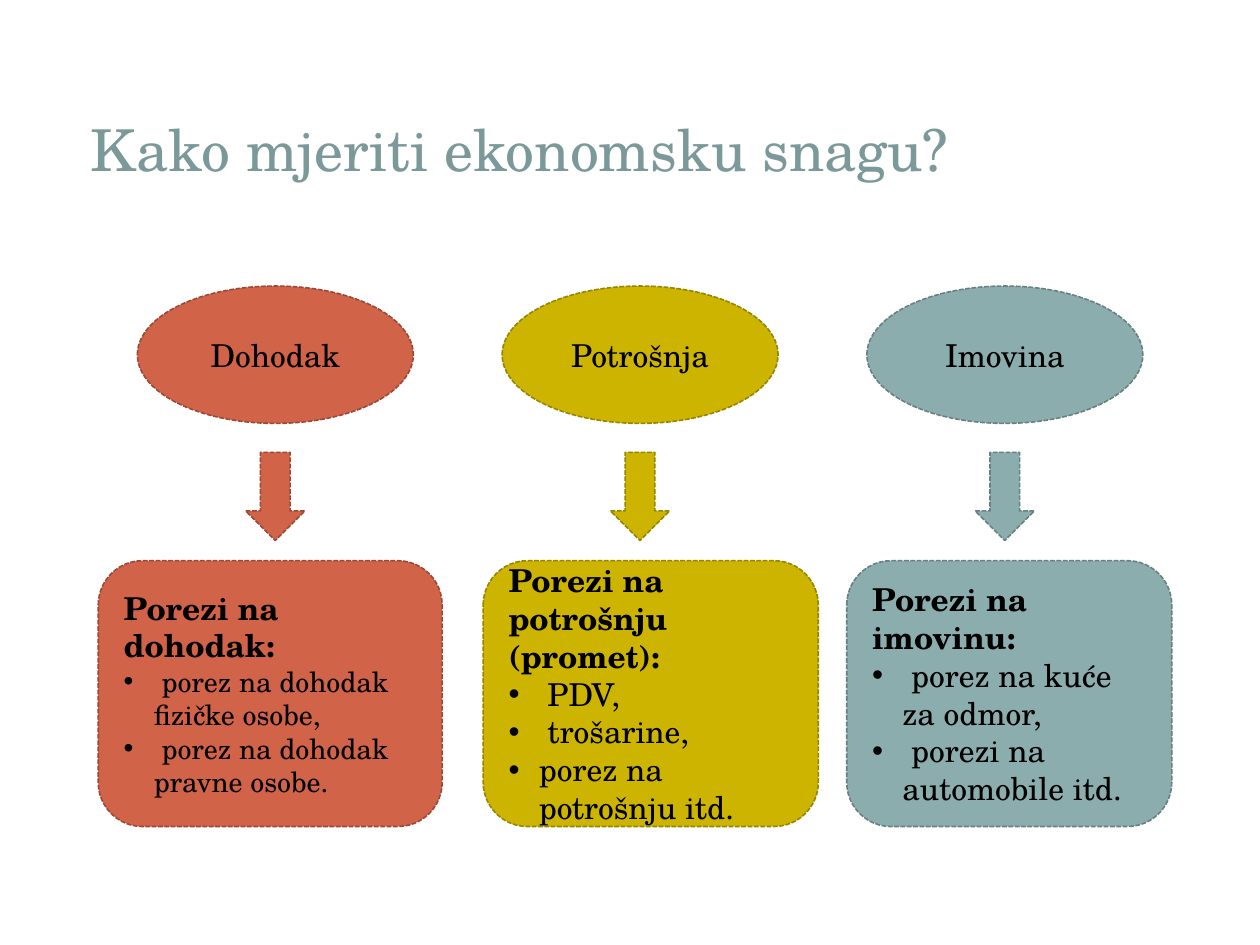
from pptx import Presentation
from pptx.dml.color import RGBColor
from pptx.enum.dml import MSO_LINE
from pptx.enum.shapes import MSO_SHAPE as Shape
from pptx.enum.text import MSO_ANCHOR as Anchor, PP_ALIGN as Align
from pptx.oxml.ns import qn
from pptx.util import Inches, Pt
from lxml.etree import SubElement

FONT = "TeX Gyre Schola"
BLACK = RGBColor(0x00, 0x00, 0x00)
TITLE_TEAL = RGBColor(0x7C, 0x99, 0x9A)
RED, DARK_RED = RGBColor(0xD1, 0x63, 0x49), RGBColor(0x9B, 0x49, 0x36)
GOLD, DARK_GOLD = RGBColor(0xCC, 0xB4, 0x00), RGBColor(0x97, 0x85, 0x00)
TEAL, DARK_TEAL = RGBColor(0x8C, 0xAD, 0xAE), RGBColor(0x68, 0x80, 0x81)

COLUMN_LEFT, COLUMN_PITCH, COLUMN_WIDTH = 1.09, 2.895, 2.19
COLUMN_TOP = 2.27
BULLET_INDENT = Inches(0.24)

TAX_BASES = [
    ("Dohodak", RED, DARK_RED, (-0.31, 2.73), "Porezi na dohodak:", 16,
     [" porez na dohodak fizičke osobe,", " porez na dohodak pravne osobe."]),
    ("Potrošnja", GOLD, DARK_GOLD, (-0.15, 2.66), "Porezi na potrošnju (promet):", 18,
     [" PDV,", " trošarine,", "porez na potrošnju itd."]),
    ("Imovina", TEAL, DARK_TEAL, (-0.16, 2.58), "Porezi na imovinu:", 18,
     [" porez na kuće za odmor,", " porezi na automobile itd."]),
]


def add_run(paragraph, text, size, color=BLACK, bold=False):
    """Append one formatted run to a paragraph."""
    run = paragraph.add_run()
    run.text = text
    run.font.name = FONT
    run.font.size = Pt(size)
    run.font.bold = bold
    run.font.color.rgb = color


def add_bullet(paragraph):
    """Give a paragraph a round bullet with a hanging indent."""
    properties = paragraph._p.get_or_add_pPr()
    properties.set("marL", str(BULLET_INDENT))
    properties.set("indent", str(-BULLET_INDENT))
    SubElement(properties, qn("a:buFont")).set("typeface", "Arial")
    SubElement(properties, qn("a:buChar")).set("char", "•")


def add_dashed_shape(slide, preset, left, top, width, height, fill, outline):
    """Add a filled preset shape with a fine dashed outline."""
    shape = slide.shapes.add_shape(
        preset, Inches(left), Inches(top), Inches(width), Inches(height))
    shape.shadow.inherit = False
    shape.fill.solid()
    shape.fill.fore_color.rgb = fill
    shape.line.color.rgb = outline
    shape.line.width = Pt(0.9)
    shape.line.dash_style = MSO_LINE.SQUARE_DOT
    shape.text_frame.word_wrap = True
    shape.text_frame.vertical_anchor = Anchor.MIDDLE
    return shape


def add_title(slide, left, top, width, height):
    """Place the slide title at the foot of its box."""
    title = slide.shapes.add_textbox(
        Inches(left), Inches(top), Inches(width), Inches(height))
    frame = title.text_frame
    frame.word_wrap = True
    frame.vertical_anchor = Anchor.BOTTOM
    frame.margin_bottom = Inches(0.1)
    heading = frame.paragraphs[0]
    heading.alignment = Align.CENTER
    add_run(heading, "Kako mjeriti ekonomsku snagu?", 33, TITLE_TEAL)


def add_tax_card(slide, left, top, width, height, colors, heading, size, taxes):
    """Place a rounded card with a bold heading and a list of taxes."""
    card = add_dashed_shape(
        slide, Shape.ROUNDED_RECTANGLE, left, top, width, height, *colors)
    frame = card.text_frame
    frame.paragraphs[0].alignment = Align.LEFT
    add_run(frame.paragraphs[0], heading, 18, bold=True)
    for tax in taxes:
        item = frame.add_paragraph()
        item.alignment = Align.LEFT
        add_bullet(item)
        add_run(item, tax, size)


def add_tax_column(slide, left, top, width, tax_base):
    """Place an ellipse, a down arrow and a tax card one below another."""
    base, fill, outline, (card_offset, card_width), heading, size, taxes = tax_base
    colors = fill, outline
    ellipse = add_dashed_shape(slide, Shape.OVAL, left, top, width, 1.09, *colors)
    label = ellipse.text_frame.paragraphs[0]
    label.alignment = Align.CENTER
    add_run(label, base, 18)
    arrow_width = 0.47
    add_dashed_shape(slide, Shape.DOWN_ARROW, left + (width - arrow_width) / 2,
                     top + 1.32, arrow_width, 0.7, *colors)
    add_tax_card(slide, left + card_offset, top + 2.18, card_width, 2.11,
                 colors, heading, size, taxes)


def main():
    """Build the slide and save it."""
    deck = Presentation()
    deck.slide_width, deck.slide_height = Inches(10), Inches(7.5)
    slide = deck.slides.add_slide(deck.slide_layouts[6])
    add_title(slide, 0, 0.13, 8.25, 1.42)
    for index, tax_base in enumerate(TAX_BASES):
        add_tax_column(slide, COLUMN_LEFT + index * COLUMN_PITCH, COLUMN_TOP,
                       COLUMN_WIDTH, tax_base)
    deck.save("out.pptx")


if __name__ == "__main__":
    main()
